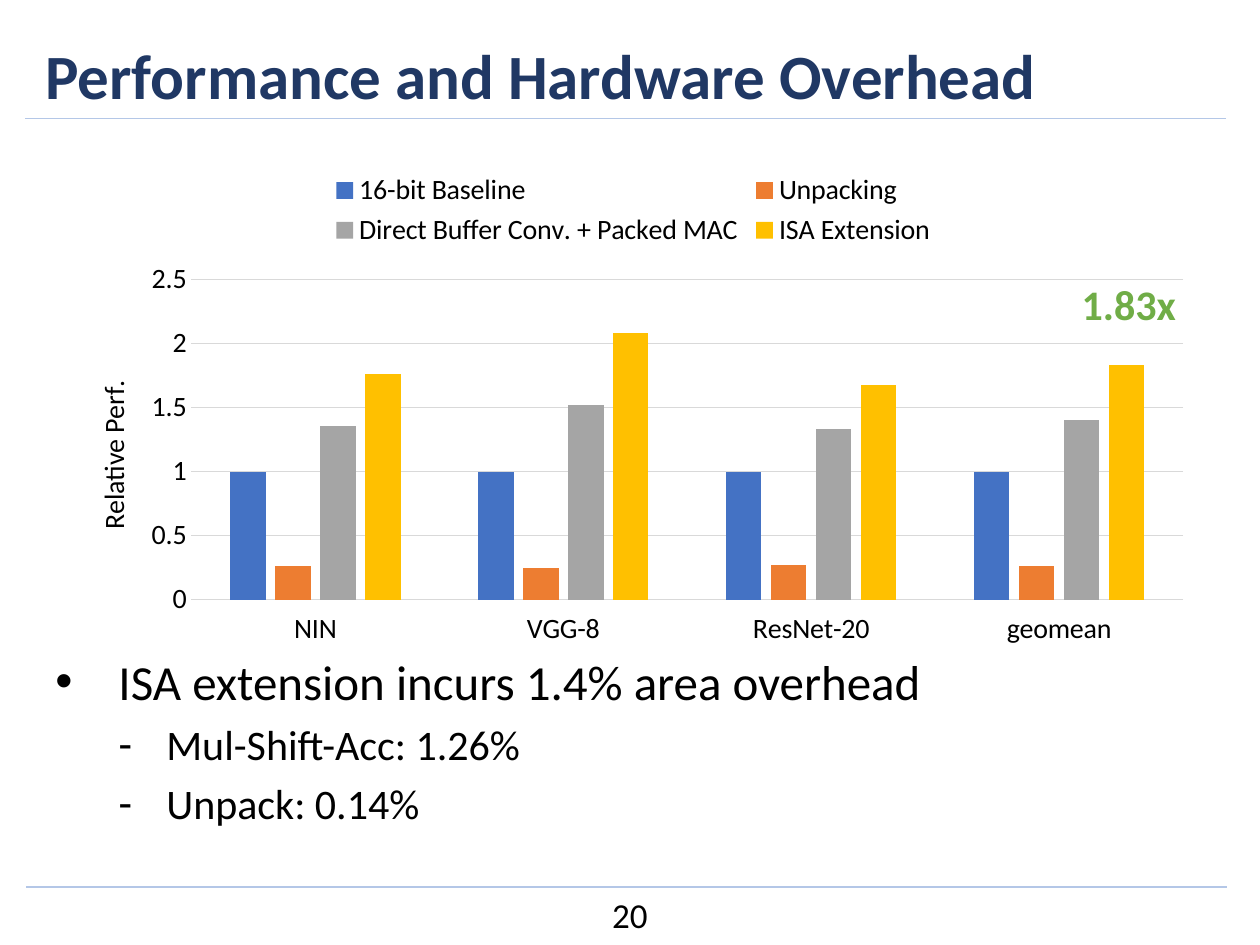
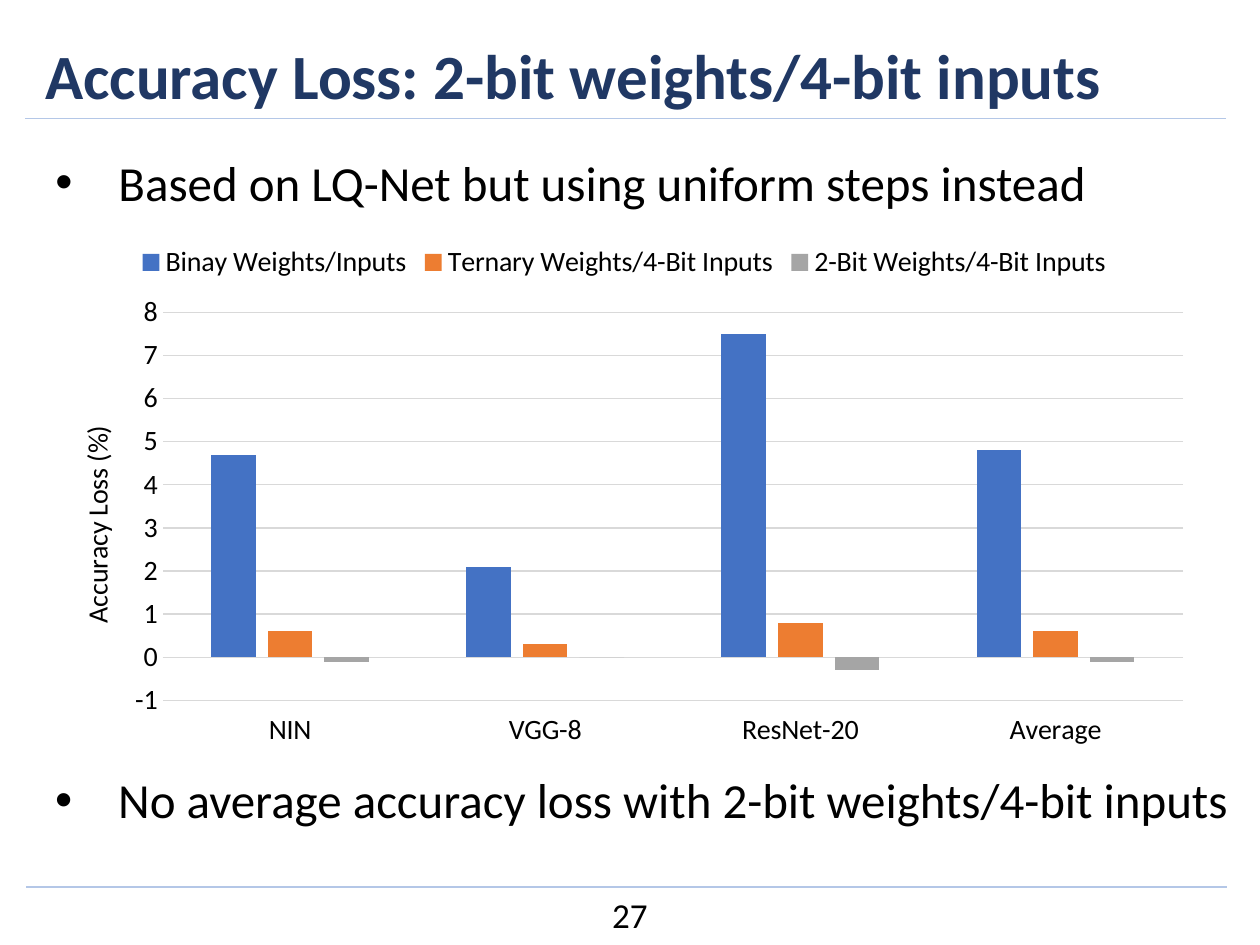
from lxml import etree
from pptx import Presentation
from pptx.chart.data import CategoryChartData
from pptx.dml.color import RGBColor
from pptx.enum.chart import XL_CHART_TYPE, XL_LEGEND_POSITION, XL_TICK_LABEL_POSITION, XL_TICK_MARK
from pptx.enum.shapes import MSO_CONNECTOR
from pptx.enum.text import MSO_ANCHOR, MSO_AUTO_SIZE, PP_ALIGN
from pptx.oxml.ns import qn
from pptx.util import Inches, Pt

COLUMNS = XL_CHART_TYPE.COLUMN_CLUSTERED
LEGEND_TOP = XL_LEGEND_POSITION.TOP
LABELS_LOW = XL_TICK_LABEL_POSITION.LOW
NO_TICKS = XL_TICK_MARK.NONE
STRAIGHT = MSO_CONNECTOR.STRAIGHT
TOP, MIDDLE = MSO_ANCHOR.TOP, MSO_ANCHOR.MIDDLE
NO_FIT = MSO_AUTO_SIZE.NONE
LEFT, CENTER = PP_ALIGN.LEFT, PP_ALIGN.CENTER

FONT = "Calibri"
COLORS = {"title": "203864", "text": "000000", "rule": "B4C7E7", "grid": "D9D9D9", "gain": "70AD47"}
SERIES_COLORS = ["4472C4", "ED7D31", "A5A5A5", "FFC000"]
RULES = [(0.2, 0.94), (0.21, 7.04)]
RULE_LENGTH = 9.53
# Bullet levels: character, left margin, hanging indent, text size
LEVELS = [("•", 0.5, 0.5, 28), ("-", 0.88, 0.38, 24)]


def color(name):
    return RGBColor.from_string(COLORS.get(name, name))


def apply(target, values):
    for name, value in values.items():
        setattr(target, name, value)


def set_font(font, size, color_name="text", bold=False):
    apply(font, {"name": FONT, "size": Pt(size), "bold": bold})
    font.color.rgb = color(color_name)


def set_line(line, color_name, width):
    line.color.rgb = color(color_name)
    line.width = Pt(width)


def place_in_chart(element, chart_box, position, inner=False):
    """Fix a chart part at a slide position (left, top[, width, height])."""
    layout = element.find(qn("c:layout"))
    if layout is None:
        layout = etree.Element(qn("c:layout"))
        if inner:
            element.insert(0, layout)
        else:
            element.find(qn("c:tx")).addnext(layout)
    manual = etree.SubElement(layout, qn("c:manualLayout"))
    settings = [("layoutTarget", "inner")] if inner else []
    settings += [("xMode", "edge"), ("yMode", "edge")]
    left, top, width, height = chart_box
    fractions = [(position[0] - left) / width, (position[1] - top) / height]
    if inner:
        fractions += [position[2] / width, position[3] / height]
    settings += [(key, f"{value:.4f}") for key, value in zip("xywh", fractions)]
    for tag, value in settings:
        etree.SubElement(manual, qn(f"c:{tag}")).set("val", value)


class Deck:
    def __init__(self):
        self.presentation = Presentation()
        apply(self.presentation, {"slide_width": Inches(10), "slide_height": Inches(7.5)})
        self.slide = None

    def new_slide(self, title, number):
        self.slide = self.presentation.slides.add_slide(self.presentation.slide_layouts[1])
        for left, top in RULES:
            self.rule(left, top)
        shape = self.slide.shapes.title
        self.move(shape, (0.26, 0.26, 9.31, 0.66))
        self.fill_text(shape, title, 36, "title", True, LEFT, MIDDLE)
        self.label(str(number), (3.99, 7.04, 2.02, 0.5), 20)

    def move(self, shape, box):
        apply(shape, dict(zip(("left", "top", "width", "height"), map(Inches, box))))

    def rule(self, left, top):
        ends = map(Inches, (left, top, left + RULE_LENGTH, top))
        line = self.slide.shapes.add_connector(STRAIGHT, *ends)
        set_line(line.line, "rule", 1)
        etree.SubElement(line._element.spPr, qn("a:effectLst"))

    def fill_text(self, shape, text, size, color_name, bold, alignment, anchor):
        frame = shape.text_frame
        apply(frame, {"word_wrap": True, "auto_size": NO_FIT, "vertical_anchor": anchor})
        paragraph = frame.paragraphs[0]
        paragraph.alignment = alignment
        run = paragraph.add_run()
        run.text = text
        set_font(run.font, size, color_name, bold)

    def label(self, text, box, size, color_name="text", bold=False):
        shape = self.slide.shapes.add_textbox(*map(Inches, box))
        self.fill_text(shape, text, size, color_name, bold, CENTER, TOP)

    def body(self, box, items):
        shape = self.slide.placeholders[1]
        self.move(shape, box)
        self.bullets(shape, items)

    def bullet_box(self, box, items):
        self.bullets(self.slide.shapes.add_textbox(*map(Inches, box)), items)

    def bullets(self, shape, items):
        frame = shape.text_frame
        apply(frame, {"word_wrap": True, "auto_size": NO_FIT, "vertical_anchor": TOP})
        for index, (level, text) in enumerate(items):
            paragraph = frame.add_paragraph() if index else frame.paragraphs[0]
            character, margin, hanging, size = LEVELS[level]
            properties = paragraph._p.get_or_add_pPr()
            properties.set("marL", str(Inches(margin)))
            properties.set("indent", str(-Inches(hanging)))
            etree.SubElement(properties, qn("a:buFont")).set("typeface", "Arial")
            etree.SubElement(properties, qn("a:buChar")).set("char", character)
            apply(paragraph, {"level": level, "alignment": LEFT,
                              "space_before": Pt(size * 0.2 if index else 0)})
            run = paragraph.add_run()
            run.text = text
            set_font(run.font, size)

    def column_chart(self, box, plot_box, title_position, axis_title, categories, series, scale):
        data = CategoryChartData()
        data.categories = categories
        for name, values in series.items():
            data.add_series(name, values)
        chart = self.slide.shapes.add_chart(COLUMNS, *map(Inches, box), data).chart
        set_font(chart.font, 16)
        apply(chart, {"has_title": False, "has_legend": True})
        apply(chart.legend, {"position": LEGEND_TOP, "include_in_layout": False})
        set_font(chart.legend.font, 16)

        # Columns
        plot = chart.plots[0]
        apply(plot, {"gap_width": 219, "overlap": -27, "vary_by_categories": False})
        for column, fill in zip(plot.series, SERIES_COLORS):
            column.invert_if_negative = False
            column.format.fill.solid()
            column.format.fill.fore_color.rgb = color(fill)

        # Axes
        for axis in (chart.category_axis, chart.value_axis):
            apply(axis, {"major_tick_mark": NO_TICKS, "minor_tick_mark": NO_TICKS})
            set_font(axis.tick_labels.font, 16)
        chart.category_axis.tick_label_position = LABELS_LOW
        set_line(chart.category_axis.format.line, "grid", 0.75)
        value_axis = chart.value_axis
        apply(value_axis, dict(zip(("minimum_scale", "maximum_scale", "major_unit"), scale)))
        value_axis.format.line.fill.background()
        set_line(value_axis.major_gridlines.format.line, "grid", 0.75)
        run = value_axis.axis_title.text_frame.paragraphs[0].add_run()
        run.text = axis_title
        set_font(run.font, 16)

        place_in_chart(value_axis.axis_title._element, box, title_position)
        place_in_chart(chart._chartSpace.chart.plotArea, box, plot_box, inner=True)


def main():
    deck = Deck()
    networks = ["NIN", "VGG-8", "ResNet-20"]

    # Performance and area overhead
    deck.new_slide("Performance and Hardware Overhead", 20)
    deck.body((0.34, 5.12, 8.91, 1.72), [
        (0, "ISA extension incurs 1.4% area overhead"),
        (1, "Mul-Shift-Acc: 1.26%"),
        (1, "Unpack: 0.14%"),
    ])
    deck.column_chart(
        (0.48, 1.26, 9.09, 3.89), (1.52, 2.22, 7.87, 2.54), (0.71, 2.98),
        "Relative Perf.", networks + ["geomean"], {
            "16-bit Baseline": (1, 1, 1, 1),
            "Unpacking": (0.26, 0.25, 0.27, 0.26),
            "Direct Buffer Conv. + Packed MAC": (1.36, 1.52, 1.33, 1.4),
            "ISA Extension": (1.76, 2.08, 1.68, 1.83),
        }, (0, 2.5, 0.5))
    deck.label("1.83x", (8.43, 2.16, 1.06, 0.53), 24, "gain", True)

    # Accuracy loss
    deck.new_slide("Accuracy Loss: 2-bit weights/4-bit inputs", 27)
    deck.body((0.34, 1.16, 8.91, 0.66), [(0, "Based on LQ-Net but using uniform steps instead")])
    deck.column_chart(
        (0.34, 1.83, 9.23, 4.18), (1.29, 2.48, 8.1, 3.08), (0.58, 3.34),
        "Accuracy Loss (%)", networks + ["Average"], {
            "Binay Weights/Inputs": (4.7, 2.1, 7.5, 4.8),
            "Ternary Weights/4-Bit Inputs": (0.6, 0.3, 0.8, 0.6),
            "2-Bit Weights/4-Bit Inputs": (-0.1, 0, -0.3, -0.1),
        }, (-1, 8, 1))
    deck.bullet_box((0.34, 6.06, 9.66, 0.66),
                    [(0, "No average accuracy loss with 2-bit weights/4-bit inputs")])

    deck.presentation.save("out.pptx")


if __name__ == "__main__":
    main()
